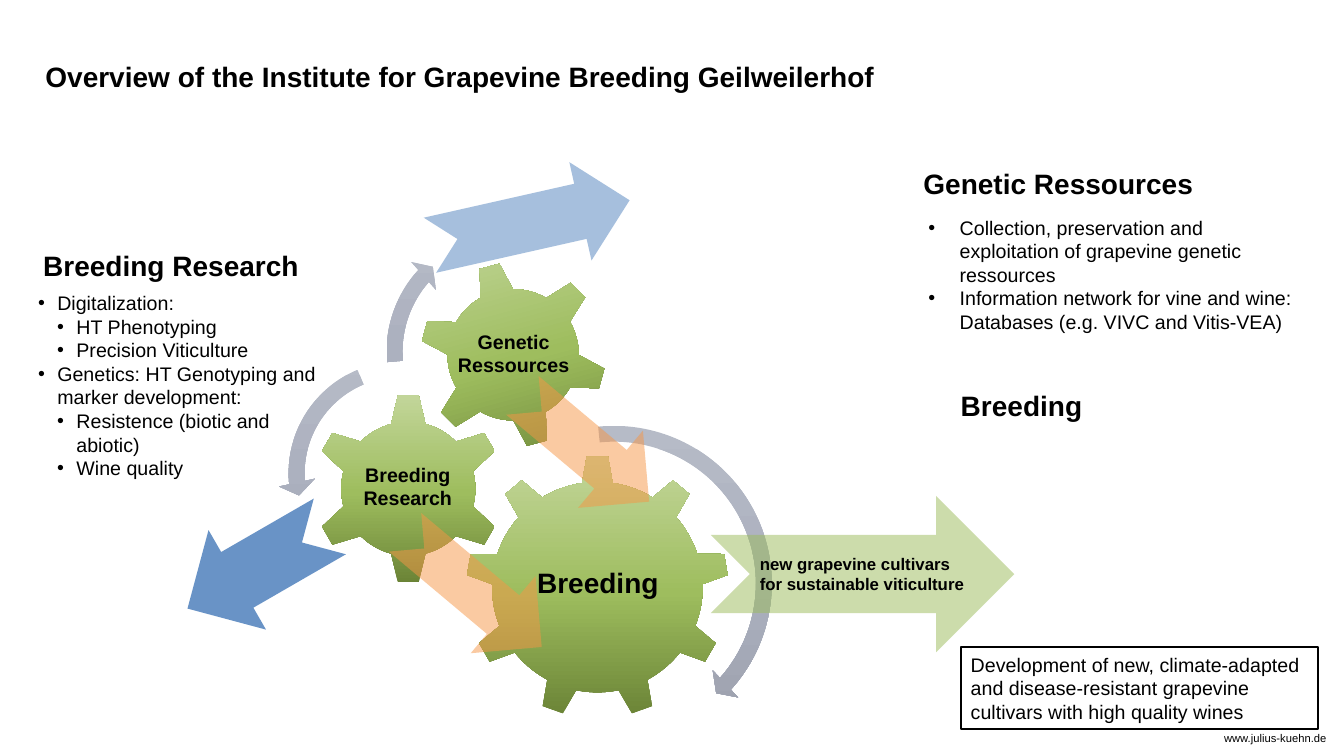
from copy import deepcopy
from dataclasses import dataclass

from lxml.etree import SubElement
from pptx import Presentation
from pptx.dml.color import RGBColor
from pptx.enum.shapes import MSO_SHAPE
from pptx.enum.text import MSO_ANCHOR, MSO_AUTO_SIZE, PP_ALIGN
from pptx.oxml.ns import qn
from pptx.util import Emu, Pt

EMU_PER_PX = 9144  # 100 px to the inch


@dataclass(frozen=True)
class Theme:
    font: str = "Arial"
    text: str = "000000"
    blue: str = "4F81BD"
    orange: str = "F79646"
    green: str = "9BBB59"
    gear: tuple = ((0, "6A8336"), (0.48, "9EBD5E"), (1, "C3D69B"))
    rotation: tuple = ((0, "B6BBC7"), (0.5, "ACB1BF"), (1, "999DAA"))
    heading: int = 20
    body: int = 14
    note: int = 12
    footer: int = 8


THEME = Theme()


def px(length):
    return Emu(length * EMU_PER_PX)


def box(left, top, width, height):
    return px(left), px(top), px(width), px(height)


def write(paragraph, text, size, bold=False):
    run = paragraph.add_run()
    run.text = text
    run.font.name = THEME.font
    run.font.size = Pt(size)
    run.font.bold = bold
    run.font.color.rgb = RGBColor.from_string(THEME.text)


def fill_text(shape, text, size, bold=False, align=PP_ALIGN.LEFT,
              anchor=MSO_ANCHOR.MIDDLE):
    frame = shape.text_frame
    frame.word_wrap = True
    frame.auto_size = MSO_AUTO_SIZE.NONE
    frame.vertical_anchor = anchor
    paragraph = frame.paragraphs[0]
    paragraph.alignment = align
    write(paragraph, text, size, bold)
    return paragraph


def add_label(slide, area, text, size=THEME.heading, **style):
    shape = slide.shapes.add_textbox(*box(*area))
    return fill_text(shape, text, size, bold=True, **style)


def add_plain_shape(slide, kind, area, rotation=0, adjustments=()):
    shape = slide.shapes.add_shape(kind, *box(*area))
    shape.shadow.inherit = False
    shape.line.fill.background()
    shape.rotation = rotation
    for index, value in enumerate(adjustments):
        shape.adjustments[index] = value
    return shape


def add_gradient_shape(slide, kind, area, stops, angle, **geometry):
    """Angle is counter-clockwise, in degrees."""
    shape = add_plain_shape(slide, kind, area, **geometry)
    shape.fill.gradient()
    shape.fill.gradient_angle = angle
    stop_list = shape._element.spPr.find(qn("a:gradFill")).find(qn("a:gsLst"))
    stop_list.insert(1, deepcopy(stop_list[0]))
    for stop, (position, color) in zip(shape.fill.gradient_stops, stops):
        stop.position = position
        stop.color.rgb = RGBColor.from_string(color)


def add_notched_arrow(slide, area, color, opacity, rotation=0, shaft=0.5):
    shape = add_plain_shape(slide, MSO_SHAPE.NOTCHED_RIGHT_ARROW, area,
                            rotation, (shaft, 0.5))
    shape.fill.solid()
    shape.fill.fore_color.rgb = RGBColor.from_string(color)
    color_element = shape._element.spPr.find(qn("a:solidFill"))[0]
    SubElement(color_element, qn("a:alpha"), val=str(opacity * 1000))
    return shape


def add_bullets(slide, area, items, indent):
    """Items are (level, text) pairs; each level hangs one indent deeper."""
    frame = slide.shapes.add_textbox(*box(*area)).text_frame
    frame.word_wrap = True
    for index, (level, text) in enumerate(items):
        paragraph = frame.add_paragraph() if index else frame.paragraphs[0]
        paragraph.level = level
        properties = paragraph._p.get_or_add_pPr()
        properties.set("marL", str(px(indent * (level + 1))))
        properties.set("indent", str(-px(indent)))
        SubElement(properties, qn("a:buFont"), typeface=THEME.font)
        SubElement(properties, qn("a:buChar"), char="•")
        write(paragraph, text, THEME.body)


def add_title(slide, text):
    title = slide.shapes.title
    title.left, title.top, title.width, title.height = box(35, 54, 1042, 77)
    fill_text(title, text, THEME.heading, bold=True, anchor=MSO_ANCHOR.TOP)


def add_footer(slide, text):
    shape = slide.shapes.add_textbox(*box(1214, 726, 105, 20))
    fill_text(shape, text, THEME.footer, anchor=MSO_ANCHOR.TOP)
    frame = shape.text_frame
    frame.word_wrap = False
    frame.margin_left = frame.margin_right = 0
    frame.margin_top = frame.margin_bottom = 0


def add_goal_box(slide, text):
    shape = add_plain_shape(slide, MSO_SHAPE.RECTANGLE, (953, 642, 354, 81))
    shape.fill.background()
    shape.line.color.rgb = RGBColor.from_string(THEME.text)
    shape.line.width = Pt(1.5)
    fill_text(shape, text, THEME.body)


def add_gears(slide):
    for kind, area, rotation in (
        (MSO_SHAPE.GEAR_9, (462, 452, 261, 261), 0),
        (MSO_SHAPE.GEAR_6, (310, 390, 190, 190), 0),
        (MSO_SHAPE.GEAR_6, (416, 259, 186, 186), 345),
    ):
        add_gradient_shape(slide, kind, area, THEME.gear, 90,
                           rotation=rotation)
    for kind, area, adjustments in (
        (MSO_SHAPE.CIRCULAR_ARROW, (442, 412, 334, 334),
         (0.047, 2.99, 25.196, 158.538, 0.055)),
        (MSO_SHAPE.LEFT_CIRCULAR_ARROW, (276, 348, 243, 243),
         (0.065, 4.3, 104.891, 148.378, 0.075)),
        (MSO_SHAPE.CIRCULAR_ARROW, (373, 218, 262, 262),
         (0.06, 3.941, 133.138, 105.082, 0.07)),
    ):
        add_gradient_shape(slide, kind, area, THEME.rotation, 270,
                           adjustments=adjustments)
    breeding = add_label(slide, (515, 513, 156, 134), "Breeding",
                         align=PP_ALIGN.CENTER)
    breeding.line_spacing = 0.9


def add_arrows(slide):
    add_notched_arrow(slide, (381, 535, 177, 100), THEME.orange, 50, 40)
    add_notched_arrow(slide, (424, 171, 203, 100), THEME.blue, 50, 347.3, 0.56)
    cultivars = add_notched_arrow(slide, (705, 492, 301, 155), THEME.green, 50)
    fill_text(cultivars, "new grapevine cultivars for sustainable viticulture",
              THEME.note, bold=True)
    add_notched_arrow(slide, (499, 395, 164, 100), THEME.orange, 50, 40)
    add_notched_arrow(slide, (175, 506, 163, 114), THEME.blue, 85, 150, 0.56)


def main():
    presentation = Presentation()
    presentation.slide_width, presentation.slide_height = px(1333), px(750)
    slide = presentation.slides.add_slide(presentation.slide_layouts[5])

    add_footer(slide, "www.julius-kuehn.de")
    add_title(slide, "Overview of the Institute for Grapevine Breeding "
                     "Geilweilerhof")
    add_gears(slide)
    add_goal_box(slide, "Development of new, climate-adapted and "
                        "disease-resistant grapevine cultivars with high "
                        "quality wines")
    add_arrows(slide)

    add_label(slide, (906, 160, 389, 44), "Genetic Ressources")
    add_label(slide, (33, 241, 306, 44), "Breeding Research")
    add_label(slide, (943, 380, 321, 44), "Breeding")
    for area, text in (((431, 322, 157, 81), "Genetic Ressources"),
                       ((326, 454, 157, 76), "Breeding Research")):
        add_label(slide, area, text, THEME.body, align=PP_ALIGN.CENTER,
                  anchor=MSO_ANCHOR.TOP)

    add_bullets(slide, (911, 209, 385, 151), (
        (0, "Collection, preservation and exploitation of grapevine genetic "
            "ressources"),
        (0, "Information network for vine and wine: Databases (e.g. VIVC and "
            "Vitis-VEA)"),
    ), indent=31)
    add_bullets(slide, (28, 284, 297, 199), (
        (0, "Digitalization:"),
        (1, "HT Phenotyping"),
        (1, "Precision Viticulture"),
        (0, "Genetics: HT Genotyping and marker development:"),
        (1, "Resistence (biotic and abiotic)"),
        (1, "Wine quality"),
    ), indent=19)

    presentation.save("out.pptx")


if __name__ == "__main__":
    main()
